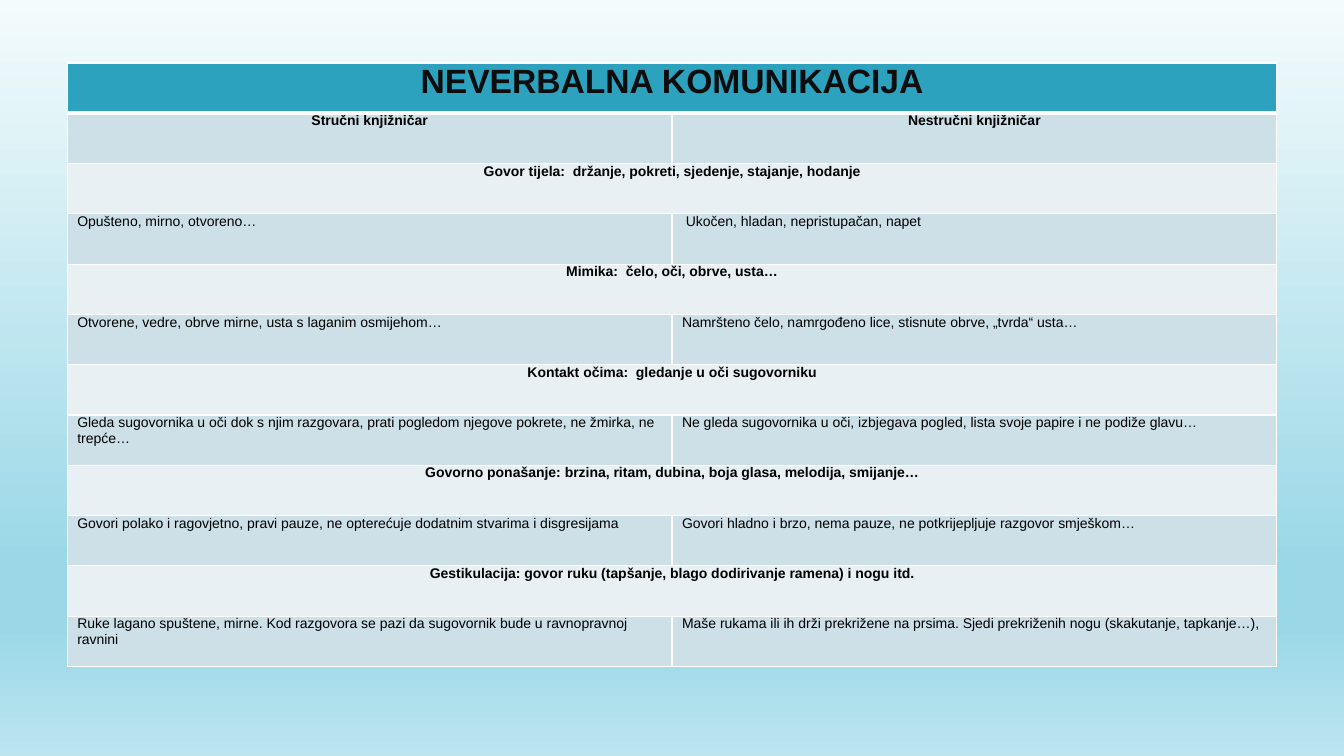
from lxml import etree
from pptx import Presentation
from pptx.dml.color import RGBColor
from pptx.enum.text import PP_ALIGN
from pptx.oxml.ns import qn
from pptx.util import Pt

CENTER, LEFT = PP_ALIGN.CENTER, PP_ALIGN.LEFT

TITLE = "NEVERBALNA KOMUNIKACIJA"
COLUMN_HEADS = ("Stručni knjižničar", "Nestručni knjižničar")
SECTIONS = [
    ("Govor tijela:  držanje, pokreti, sjedenje, stajanje, hodanje",
     "Opušteno, mirno, otvoreno…",
     " Ukočen, hladan, nepristupačan, napet"),
    ("Mimika:  čelo, oči, obrve, usta…",
     "Otvorene, vedre, obrve mirne, usta s laganim osmijehom…",
     "Namršteno čelo, namrgođeno lice, stisnute obrve, „tvrda“ usta…"),
    ("Kontakt očima:  gledanje u oči sugovorniku",
     "Gleda sugovornika u oči dok s njim razgovara, prati pogledom njegove pokrete, ne žmirka, ne trepće…",
     "Ne gleda sugovornika u oči, izbjegava pogled, lista svoje papire i ne podiže glavu…"),
    ("Govorno ponašanje: brzina, ritam, dubina, boja glasa, melodija, smijanje…",
     "Govori polako i ragovjetno, pravi pauze, ne opterećuje dodatnim stvarima i disgresijama",
     "Govori hladno i brzo, nema pauze, ne potkrijepljuje razgovor smješkom…"),
    ("Gestikulacija: govor ruku (tapšanje, blago dodirivanje ramena) i nogu itd.",
     "Ruke lagano spuštene, mirne. Kod razgovora se pazi da sugovornik bude u ravnopravnoj ravnini",
     "Maše rukama ili ih drži prekrižene na prsima. Sjedi prekriženih nogu (skakutanje, tapkanje…),"),
]
BACKGROUND_STOPS = [(0, "F4FBFC"), (74, "9BD8E7"), (83, "9BD8E7"), (100, "BCE5EF")]
TITLE_FILL, PAIR_FILL, SECTION_FILL = "2DA2BF", "CDE0E8", "E8F0F4"
TITLE_INK, INK, BORDER = "0D0D0D", "000000", "FFFFFF"
FONT = "Arial"
TABLE_LEFT, TABLE_TOP, TABLE_WIDTH, ROW_HEIGHT = 48, 45, 864, 35.94


def color(value):
    return RGBColor.from_string(value)


def paint_background(slide):
    fill = slide.background.fill
    fill.gradient()
    fill.gradient_angle = 270
    stops = slide.element.find(".//" + qn("a:gsLst"))
    for stop in list(stops):
        stops.remove(stop)
    for position, value in BACKGROUND_STOPS:
        stop = etree.SubElement(stops, qn("a:gs"), pos=str(position * 1000))
        etree.SubElement(stop, qn("a:srgbClr"), val=value)


def add_borders(cell, bottom_width):
    properties = cell._tc.get_or_add_tcPr()
    for side, width in (("L", 1), ("R", 1), ("T", 1), ("B", bottom_width)):
        line = etree.SubElement(properties, qn("a:ln" + side), w=str(Pt(width)))
        solid = etree.SubElement(line, qn("a:solidFill"))
        etree.SubElement(solid, qn("a:srgbClr"), val=BORDER)


def style_cell(cell, fill, bottom_width):
    add_borders(cell, bottom_width)
    cell.fill.solid()
    cell.fill.fore_color.rgb = color(fill)
    cell.margin_left = cell.margin_right = Pt(7.2)
    cell.margin_top = cell.margin_bottom = Pt(0)


def write_cell(cell, text, size, ink, bold):
    paragraph = cell.text_frame.paragraphs[0]
    paragraph.alignment = CENTER if bold else LEFT
    run = paragraph.add_run()
    run.text = text
    run.font.name = FONT
    run.font.size = Pt(size)
    run.font.bold = bold
    run.font.color.rgb = color(ink)


def table_rows():
    rows = [((TITLE,), TITLE_FILL, 24, TITLE_INK, True, 3),
            (COLUMN_HEADS, PAIR_FILL, 10, INK, True, 1)]
    for heading, trained, untrained in SECTIONS:
        rows.append(((heading,), SECTION_FILL, 10, INK, True, 1))
        rows.append(((trained, untrained), PAIR_FILL, 10, INK, False, 1))
    return rows


def add_comparison(slide):
    rows = table_rows()
    table = slide.shapes.add_table(
        len(rows), 2, Pt(TABLE_LEFT), Pt(TABLE_TOP),
        Pt(TABLE_WIDTH), Pt(ROW_HEIGHT * len(rows))).table
    table.first_row = table.horz_banding = False
    for row_index, (texts, fill, size, ink, bold, bottom_width) in enumerate(rows):
        table.rows[row_index].height = Pt(ROW_HEIGHT)
        cells = [table.cell(row_index, column) for column in range(2)]
        for cell in cells:
            style_cell(cell, fill, bottom_width)
        if len(texts) == 1:
            cells[0].merge(cells[1])
        for cell, text in zip(cells, texts):
            write_cell(cell, text, size, ink, bold)


def main():
    presentation = Presentation()
    presentation.slide_width, presentation.slide_height = Pt(960), Pt(540)
    slide = presentation.slides.add_slide(presentation.slide_layouts[6])
    paint_background(slide)
    add_comparison(slide)
    presentation.save("out.pptx")


if __name__ == "__main__":
    main()
